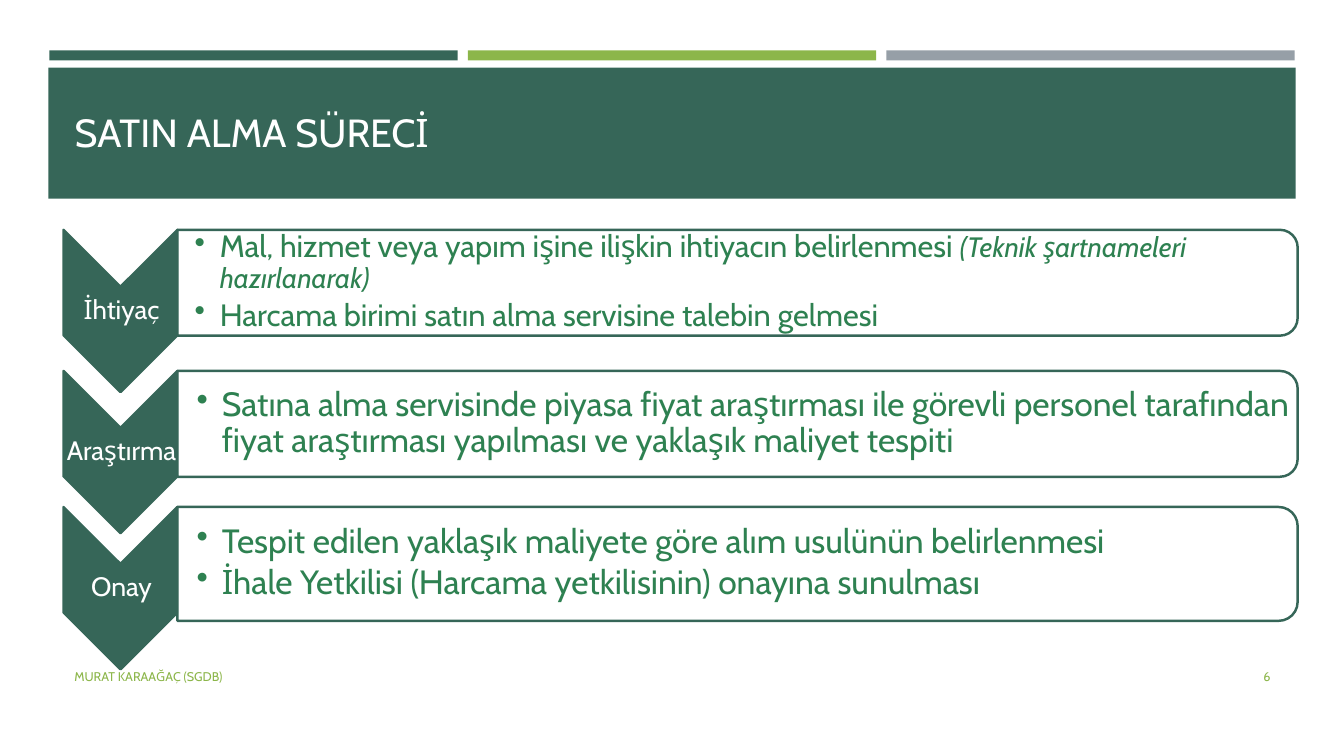
from dataclasses import dataclass

from pptx import Presentation
from pptx.dml.color import RGBColor
from pptx.enum.shapes import MSO_SHAPE as Shape
from pptx.enum.text import MSO_ANCHOR as Anchor, MSO_AUTO_SIZE as AutoSize, PP_ALIGN as Align
from pptx.oxml.ns import qn
from pptx.util import Pt
from lxml.etree import SubElement

EMU_PER_PX = 9144  # 100 px to the inch
TITLE_ONLY = 5


@dataclass(frozen=True)
class Theme:
    font: str = "Cabin"
    green: str = "366658"
    lime: str = "8CB64A"
    gray: str = "969FA7"
    body: str = "2E8151"
    white: str = "FFFFFF"
    title_size: int = 28
    label_size: int = 19
    footer_size: int = 9
    outline: float = 1.75


THEME = Theme()

# label, top, panel height, left inset, bullets as lists of (text, size, italic)
STEPS = [
    ("İhtiyaç", 228, 105, 17, [
        [("Mal, hizmet veya yapım işine ilişkin ihtiyacın belirlenmesi ", 22, False),
         ("(Teknik şartnameleri hazırlanarak)", 20, True)],
        [("Harcama birimi satın alma servisine talebin gelmesi", 22, False)],
    ]),
    ("Araştırma", 368, 105, 19, [
        [("Satına alma servisinde piyasa fiyat araştırması ile görevli personel "
          "tarafından fiyat araştırması yapılması ve yaklaşık maliyet tespiti", 24, False)],
    ]),
    ("Onay", 503, 113, 19, [
        [("Tespit edilen yaklaşık maliyete göre alım usulünün belirlenmesi", 24, False)],
        [("İhale Yetkilisi (Harcama yetkilisinin) onayına sunulması", 24, False)],
    ]),
]


def px(value):
    return round(value * EMU_PER_PX)


def apply_format(target, values):
    for name, value in values.items():
        setattr(target, name, value)


def add_span(para, text, size, color, italic=False):
    span = para.add_run()
    span.text = text
    apply_format(span.font, {"name": THEME.font, "size": Pt(size), "italic": italic})
    span.font.color.rgb = RGBColor.from_string(color)


def format_frame(frame, anchor, margins=(10, 5, 10, 5)):
    sides = ("margin_left", "margin_top", "margin_right", "margin_bottom")
    apply_format(frame, {
        "word_wrap": True, "auto_size": AutoSize.NONE, "vertical_anchor": anchor,
        **{side: px(margin) for side, margin in zip(sides, margins)},
    })


def add_text_box(page, left, top, width, height, **frame_format):
    box = page.shapes.add_textbox(px(left), px(top), px(width), px(height))
    format_frame(box.text_frame, Anchor.MIDDLE, **frame_format)
    return box.text_frame


def add_block(page, kind, left, top, width, height, fill, line=None):
    block = page.shapes.add_shape(kind, px(left), px(top), px(width), px(height))
    block.shadow.inherit = False
    block.fill.solid()
    block.fill.fore_color.rgb = RGBColor.from_string(fill)
    if line:
        block.line.color.rgb = RGBColor.from_string(line)
        block.line.width = Pt(THEME.outline)
    else:
        block.line.fill.background()
    return block


def add_turned_block(page, kind, left, top, width, height, fill):
    """Add a shape turned by 90 degrees that covers the given area once turned."""
    shift = (width - height) / 2
    block = add_block(page, kind, left + shift, top - shift, height, width, fill, THEME.green)
    block.rotation = 90
    return block


def set_opacity(block, percent):
    color = block.fill._xPr.find(qn("a:solidFill"))[0]
    SubElement(color, qn("a:alpha")).set("val", str(percent * 1000))


def add_bullet(para, indent):
    properties = para._p.get_or_add_pPr()
    properties.set("marL", str(px(indent)))
    properties.set("indent", str(-px(indent)))
    SubElement(properties, qn("a:buChar")).set("char", "•")


def add_header(page):
    for index, color in enumerate((THEME.green, THEME.lime, THEME.gray)):
        add_block(page, Shape.RECTANGLE, 49 + 415 * index, 50, 405, 10, color)
    band = add_block(page, Shape.RECTANGLE, 48, 67, 1237, 130, THEME.green)

    title = page.shapes.title
    apply_format(title, {"left": px(64), "top": px(93), "width": px(933), "height": px(66)})
    format_frame(title.text_frame, Anchor.BOTTOM)
    para = title.text_frame.paragraphs[0]
    para.alignment = Align.LEFT
    add_span(para, "SATIN ALMA SÜRECİ", THEME.title_size, THEME.white)
    band._element.addnext(title._element)


def add_step(page, label, top, height, inset, bullets):
    add_turned_block(page, Shape.CHEVRON, 63, top, 113, 161, THEME.green)
    para = add_text_box(page, 64, top + 56, 113, 48, margins=(1, 1, 1, 1)).paragraphs[0]
    apply_format(para, {"alignment": Align.CENTER, "line_spacing": 0.9, "space_after": Pt(7)})
    add_span(para, label, THEME.label_size, THEME.white)

    panel = add_turned_block(page, Shape.ROUND_2_SAME_RECTANGLE, 176, top, 1111, height, THEME.white)
    set_opacity(panel, 90)
    frame = add_text_box(page, 176, top + 5, 1106, height - 11, margins=(inset, 2, 2, 2))
    for index, spans in enumerate(bullets):
        para = frame.add_paragraph() if index else frame.paragraphs[0]
        apply_format(para, {"level": 1, "line_spacing": 0.9, "space_after": Pt(3.5)})
        add_bullet(para, 25)
        for text, size, italic in spans:
            add_span(para, text, size, THEME.body, italic)


def add_footer(page):
    for left, width, align, text in (
        (64, 756, Align.LEFT, "MURAT KARAAĞAÇ (SGDB)"),
        (1155, 115, Align.RIGHT, "6"),
    ):
        para = add_text_box(page, left, 651, width, 40).paragraphs[0]
        para.alignment = align
        add_span(para, text, THEME.footer_size, THEME.lime)


def main():
    deck = Presentation()
    apply_format(deck, {"slide_width": px(1333), "slide_height": px(750)})
    page = deck.slides.add_slide(deck.slide_layouts[TITLE_ONLY])
    add_header(page)
    add_footer(page)
    for step in STEPS:
        add_step(page, *step)
    deck.save("out.pptx")


if __name__ == "__main__":
    main()
